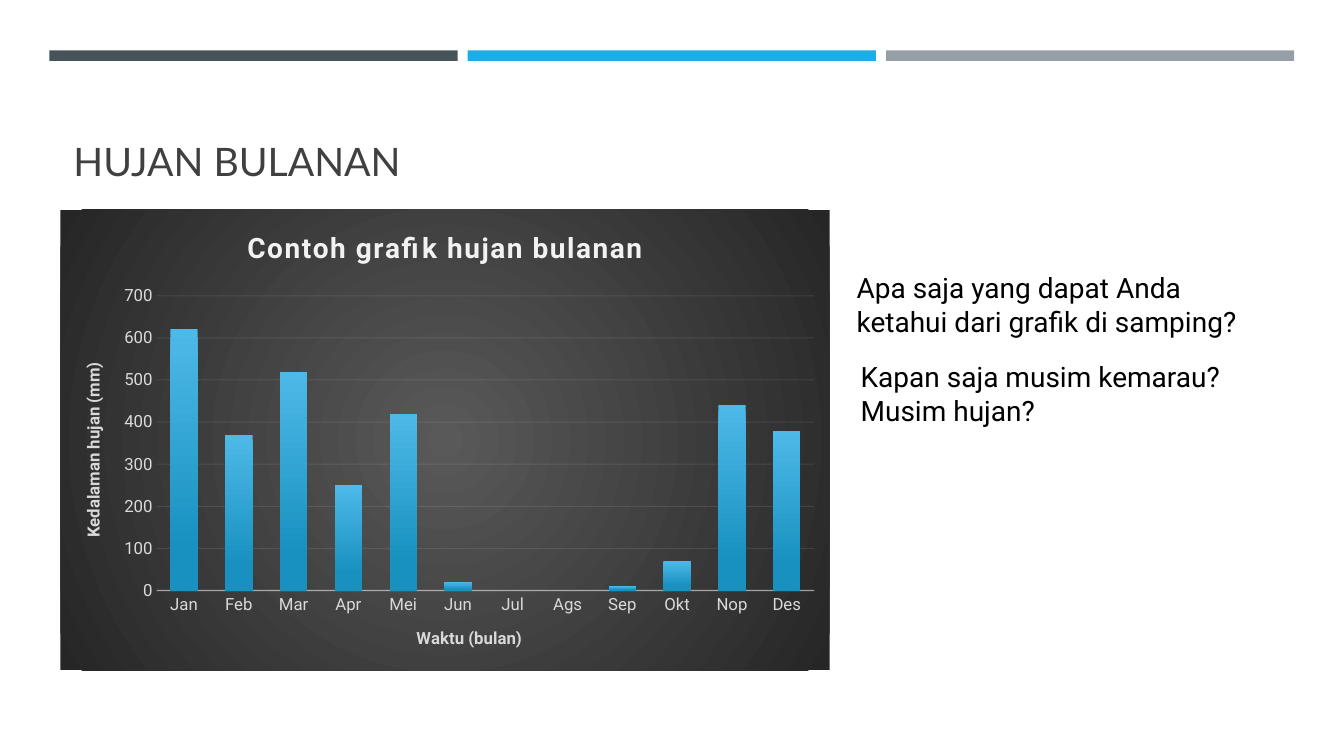
from dataclasses import dataclass

from lxml.etree import SubElement
from pptx import Presentation
from pptx.chart.data import CategoryChartData
from pptx.dml.color import RGBColor
from pptx.enum.chart import XL_CHART_TYPE, XL_TICK_MARK
from pptx.enum.shapes import MSO_SHAPE
from pptx.enum.text import MSO_ANCHOR
from pptx.oxml import parse_xml
from pptx.oxml.ns import nsdecls, qn
from pptx.util import Pt


@dataclass(frozen=True)
class Theme:
    bars: tuple = ("465359", "1CADE4", "969FA7")
    title: str = "404040"
    text: str = "000000"
    chart_title: str = "F2F2F2"
    labels: str = "D9D9D9"
    lines: str = "F2F2F2"
    backdrop: tuple = ((0, "595959"), (100, "262626"))
    columns: tuple = ((0, "4DB9E8"), (84, "1891C0"))
    heading_font: str = "Lato"
    body_font: str = "Roboto"
    title_size: int = 28
    text_size: int = 20
    label_size: int = 12


THEME = Theme()
RAINFALL = {
    "Jan": 620, "Feb": 370, "Mar": 520, "Apr": 250, "Mei": 420, "Jun": 20,
    "Jul": 0, "Ags": 0, "Sep": 10, "Okt": 70, "Nop": 440, "Des": 380,
}
CIRCLE = ('<a:path path="circle"><a:fillToRect l="50000" t="50000" '
          'r="50000" b="50000"/></a:path>')
DOWNWARD = '<a:lin ang="5400000" scaled="0"/>'


def style_font(font, color, size, name=THEME.body_font, bold=False):
    for key, value in {"size": Pt(size), "name": name, "bold": bold}.items():
        setattr(font, key, value)
    font.color.rgb = RGBColor.from_string(color)


def add_bars(slide):
    width, gap = 291.6, 7.2
    for i, color in enumerate(THEME.bars):
        sp = slide.shapes.add_shape(MSO_SHAPE.RECTANGLE, Pt(35.3 + i * (width + gap)),
                                    Pt(36), Pt(width), Pt(7.5))
        sp.shadow.inherit = False
        sp.fill.solid()
        sp.fill.fore_color.rgb = RGBColor.from_string(color)
        sp.line.fill.background()


def add_text(slide, box, lines, color, size, font=THEME.body_font, anchor=MSO_ANCHOR.TOP):
    tf = slide.shapes.add_textbox(*map(Pt, box)).text_frame
    tf.word_wrap = True
    tf.vertical_anchor = anchor
    for i, line in enumerate(lines):
        p = tf.paragraphs[0] if i == 0 else tf.add_paragraph()
        r = p.add_run()
        r.text = line
        style_font(r.font, color, size, font)


def gradient(stops, direction):
    marks = "".join(f'<a:gs pos="{pos * 1000}"><a:srgbClr val="{color}"/></a:gs>'
                    for pos, color in stops)
    return parse_xml(f'<a:gradFill {nsdecls("a")} rotWithShape="1">'
                     f'<a:gsLst>{marks}</a:gsLst>{direction}</a:gradFill>')


def style_line(line, width, element, path, opacity):
    """Colour a chart line and make its colour, found under path, translucent."""
    line.width = Pt(width)
    line.color.rgb = RGBColor.from_string(THEME.lines)
    color = element.xpath(f"{path}//a:srgbClr")[0]
    SubElement(color, qn("a:alpha")).set("val", str(opacity * 1000))


def set_title(owner, text, color, size):
    """Title a chart or an axis."""
    p = (owner.chart_title if hasattr(owner, "chart_title")
         else owner.axis_title).text_frame.paragraphs[0]
    r = p.add_run()
    r.text = text
    style_font(r.font, color, size, bold=True)
    return r


def style_axis(axis, title):
    axis.major_tick_mark = axis.minor_tick_mark = XL_TICK_MARK.NONE
    style_font(axis.tick_labels.font, THEME.labels, THEME.label_size)
    set_title(axis, title, THEME.labels, THEME.label_size)


def place_plot(chart, **fractions):
    """Fix the inner plot area as fractions of the chart."""
    places = "".join(f'<c:{key} val="{value}"/>' for key, value in fractions.items())
    area = chart._chartSpace.chart.plotArea
    for old in area.findall(qn("c:layout")):
        area.remove(old)
    area.insert(0, parse_xml(
        f'<c:layout {nsdecls("c")}><c:manualLayout><c:layoutTarget val="inner"/>'
        f'<c:xMode val="edge"/><c:yMode val="edge"/>{places}</c:manualLayout></c:layout>'))


def add_rain_chart(slide, box):
    data = CategoryChartData(number_format="0")
    data.categories = list(RAINFALL)
    data.add_series("Series 1", list(RAINFALL.values()))
    chart = slide.shapes.add_chart(XL_CHART_TYPE.COLUMN_CLUSTERED,
                                   *map(Pt, box), data).chart
    chart.has_legend = False
    style_font(chart.font, THEME.labels, THEME.label_size)
    title = set_title(chart, "Contoh grafik hujan bulanan", THEME.chart_title, THEME.text_size)
    title.font._element.set("spc", "100")

    plot = chart.plots[0]
    for key, value in {"gap_width": 100, "overlap": -24, "vary_by_categories": False}.items():
        setattr(plot, key, value)
    columns = plot.series[0]._element.get_or_add_spPr()
    columns.append(gradient(THEME.columns, DOWNWARD))

    months, depth = chart.category_axis, chart.value_axis
    style_axis(months, "Waktu (bulan)")
    style_axis(depth, "Kedalaman hujan (mm)")
    style_line(months.format.line, 1, months._element, "c:spPr", 54)
    style_line(depth.major_gridlines.format.line, 0.75, depth._element,
               "c:majorGridlines", 10)
    depth.format.line.fill.background()
    for key, value in {"minimum_scale": 0, "maximum_scale": 700, "major_unit": 100}.items():
        setattr(depth, key, value)
    place_plot(chart, x=0.125, y=0.187, w=0.855, h=0.64)

    backdrop = parse_xml(f'<c:spPr {nsdecls("c", "a")}><a:ln><a:noFill/></a:ln></c:spPr>')
    backdrop.insert(0, gradient(THEME.backdrop, CIRCLE))
    chart._chartSpace.chart.addnext(backdrop)


def main():
    prs = Presentation()
    prs.slide_width, prs.slide_height = Pt(960), Pt(540)
    slide = prs.slides.add_slide(prs.slide_layouts[6])
    add_bars(slide)
    add_text(slide, (45.4, 57.6, 868.3, 77.8), ["HUJAN BULANAN"], THEME.title,
             THEME.title_size, THEME.heading_font, MSO_ANCHOR.BOTTOM)
    add_rain_chart(slide, (43.2, 149.8, 549.4, 329))
    add_text(slide, (604.8, 190, 300.2, 55.4),
             ["Apa saja yang dapat Anda ketahui dari grafik di samping?"],
             THEME.text, THEME.text_size)
    add_text(slide, (607.7, 253.4, 300.2, 55.4),
             ["Kapan saja musim kemarau?", "Musim hujan?"], THEME.text, THEME.text_size)
    prs.save("out.pptx")


if __name__ == "__main__":
    main()
